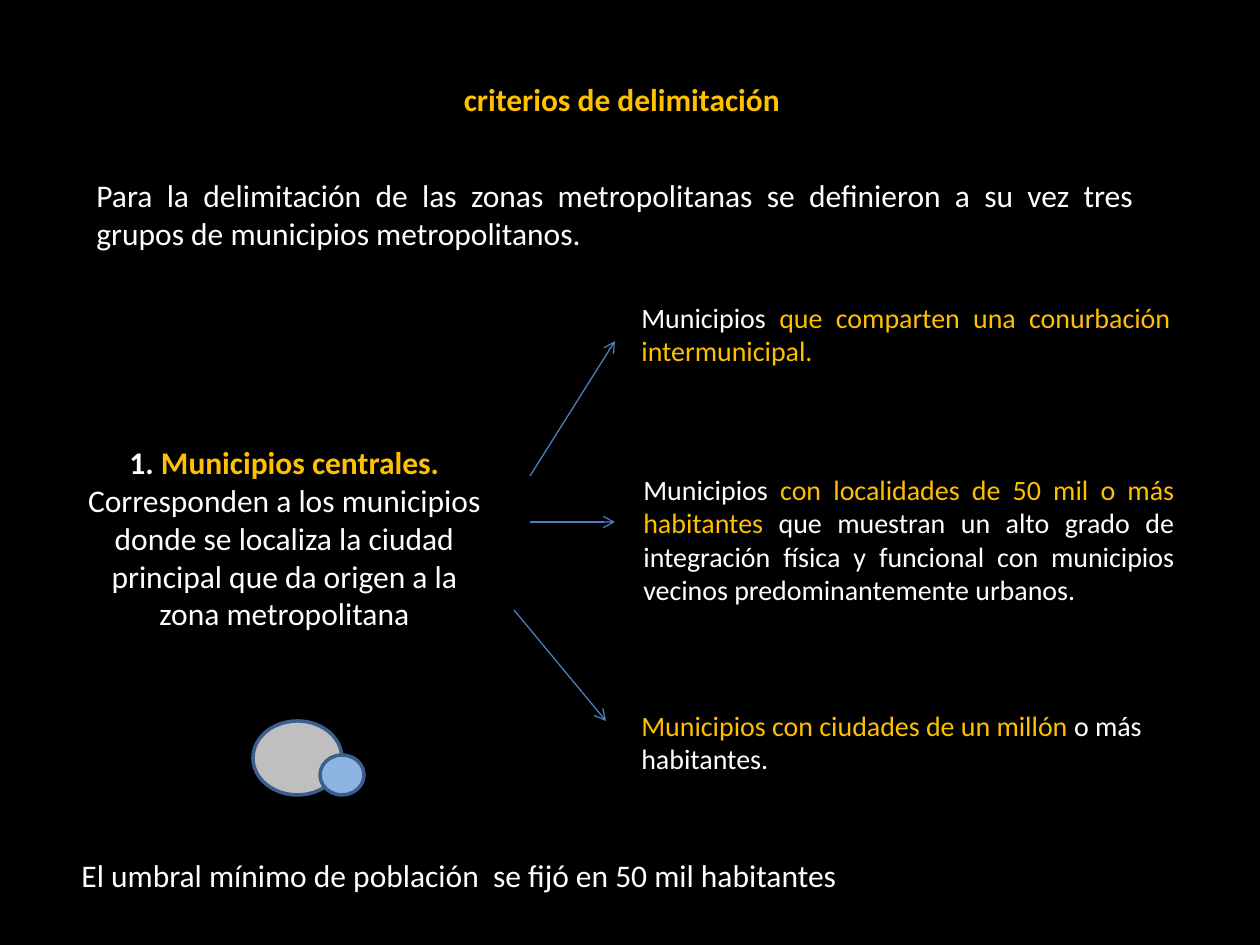
from dataclasses import dataclass

from lxml import etree
from pptx import Presentation
from pptx.dml.color import RGBColor
from pptx.enum.shapes import MSO_CONNECTOR, MSO_SHAPE
from pptx.enum.text import MSO_ANCHOR, MSO_AUTO_SIZE, PP_ALIGN
from pptx.oxml.ns import qn
from pptx.util import Emu, Pt

LEFT, CENTER, JUSTIFY = PP_ALIGN.LEFT, PP_ALIGN.CENTER, PP_ALIGN.JUSTIFY
TOP = MSO_ANCHOR.TOP
NO_AUTOFIT = MSO_AUTO_SIZE.NONE
OVAL = MSO_SHAPE.OVAL
STRAIGHT = MSO_CONNECTOR.STRAIGHT
TITLE_ONLY = 5


@dataclass(frozen=True)
class Theme:
    font: str = "Calibri"
    background: str = "000000"
    text: str = "FFFFFF"
    accent: str = "FFC000"
    arrow: str = "4B7EBC"
    outline: str = "3A5F8C"
    big_city: str = "BFBFBF"
    small_city: str = "8EB4E3"
    size: int = 18
    small_size: int = 16
    arrow_width: float = 0.75
    outline_width: float = 2


THEME = Theme()


@dataclass(frozen=True)
class Span:
    text: str
    color: str = THEME.text
    bold: bool = False
    italic: bool = False


@dataclass(frozen=True)
class TextBlock:
    x: int
    y: int
    w: int
    h: int
    spans: tuple[Span, ...]
    align: PP_ALIGN = JUSTIFY
    size: int = THEME.size
    wrap: bool = True


@dataclass(frozen=True)
class City:
    x: int
    y: int
    w: int
    h: int
    fill: str


@dataclass(frozen=True)
class Arrow:
    x1: int
    y1: int
    x2: int
    y2: int


def px(n: int) -> Emu:
    return Emu(round(n * 914400 / 126))


def rgb(value: str) -> RGBColor:
    return RGBColor.from_string(value)


def write_text(sp, block: TextBlock) -> None:
    sp.left, sp.top, sp.width, sp.height = map(px, (block.x, block.y, block.w, block.h))
    tf = sp.text_frame
    tf.word_wrap = block.wrap
    tf.auto_size = NO_AUTOFIT
    tf.vertical_anchor = TOP
    p = tf.paragraphs[0]
    p.alignment = block.align
    for span in block.spans:
        r = p.add_run()
        r.text = span.text
        r.font.name = THEME.font
        r.font.size = Pt(block.size)
        r.font.bold = span.bold
        r.font.italic = span.italic
        r.font.color.rgb = rgb(span.color)


def draw_text(slide, block: TextBlock) -> None:
    sp = slide.shapes.add_textbox(0, 0, 0, 0)
    write_text(sp, block)


def draw_city(slide, city: City) -> None:
    sp = slide.shapes.add_shape(OVAL, *map(px, (city.x, city.y, city.w, city.h)))
    sp.shadow.inherit = False
    sp.fill.solid()
    sp.fill.fore_color.rgb = rgb(city.fill)
    sp.line.color.rgb = rgb(THEME.outline)
    sp.line.width = Pt(THEME.outline_width)


def draw_arrow(slide, arrow: Arrow) -> None:
    line = slide.shapes.add_connector(
        STRAIGHT, *map(px, (arrow.x1, arrow.y1, arrow.x2, arrow.y2)))
    line.line.color.rgb = rgb(THEME.arrow)
    line.line.width = Pt(THEME.arrow_width)
    etree.SubElement(line.line._get_or_add_ln(), qn("a:tailEnd"), type="arrow")
    etree.SubElement(line._element.spPr, qn("a:effectLst"))


TITLE = TextBlock(210, 74, 824, 50,
                  (Span("criterios de delimitación", THEME.accent, bold=True),), CENTER)

TEXTS = (
    # Introduction
    TextBlock(84, 170, 1062, 89, (
        Span("Para la delimitación de las zonas metropolitanas se definieron a su vez "
             "tres grupos de municipios metropolitanos."),)),
    # Central municipalities
    TextBlock(69, 437, 431, 204, (
        Span("1. ", bold=True),
        Span("Municipios centrales", THEME.accent, bold=True),
        Span(". ", THEME.accent, bold=True, italic=True),
        Span("Corresponden a los municipios donde se localiza la ciudad principal "
             "que da origen a la zona metropolitana")), CENTER),
    # Three criteria
    TextBlock(629, 294, 554, 81, (
        Span("Municipios "),
        Span("que comparten una conurbación intermunicipal.", THEME.accent)),
        size=THEME.small_size),
    TextBlock(631, 466, 556, 149, (
        Span("Municipios "),
        Span("con localidades de 50 mil o más habitantes", THEME.accent),
        Span(" que muestran un alto grado de integración física y funcional con "
             "municipios vecinos predominantemente urbanos.")),
        size=THEME.small_size),
    TextBlock(629, 702, 556, 81, (
        Span("Municipios con ciudades de un millón ", THEME.accent),
        Span("o más habitantes.")), LEFT, THEME.small_size),
    # Population threshold
    TextBlock(69, 850, 790, 50, (
        Span("El umbral mínimo de población  se fijó en 50 mil habitantes"),),
        LEFT, wrap=False),
)

CITIES = (
    City(253, 721, 89, 74, THEME.big_city),
    City(320, 755, 44, 40, THEME.small_city),
)

ARROWS = (
    Arrow(530, 476, 615, 341),
    Arrow(530, 522, 615, 522),
    Arrow(514, 610, 606, 721),
)


def main() -> None:
    prs = Presentation()
    prs.slide_width, prs.slide_height = px(1260), px(945)
    slide = prs.slides.add_slide(prs.slide_layouts[TITLE_ONLY])
    slide.background.fill.solid()
    slide.background.fill.fore_color.rgb = rgb(THEME.background)

    write_text(slide.shapes.title, TITLE)
    for block in TEXTS:
        draw_text(slide, block)
    for city in CITIES:
        draw_city(slide, city)
    for arrow in ARROWS:
        draw_arrow(slide, arrow)

    prs.save("out.pptx")


if __name__ == "__main__":
    main()
